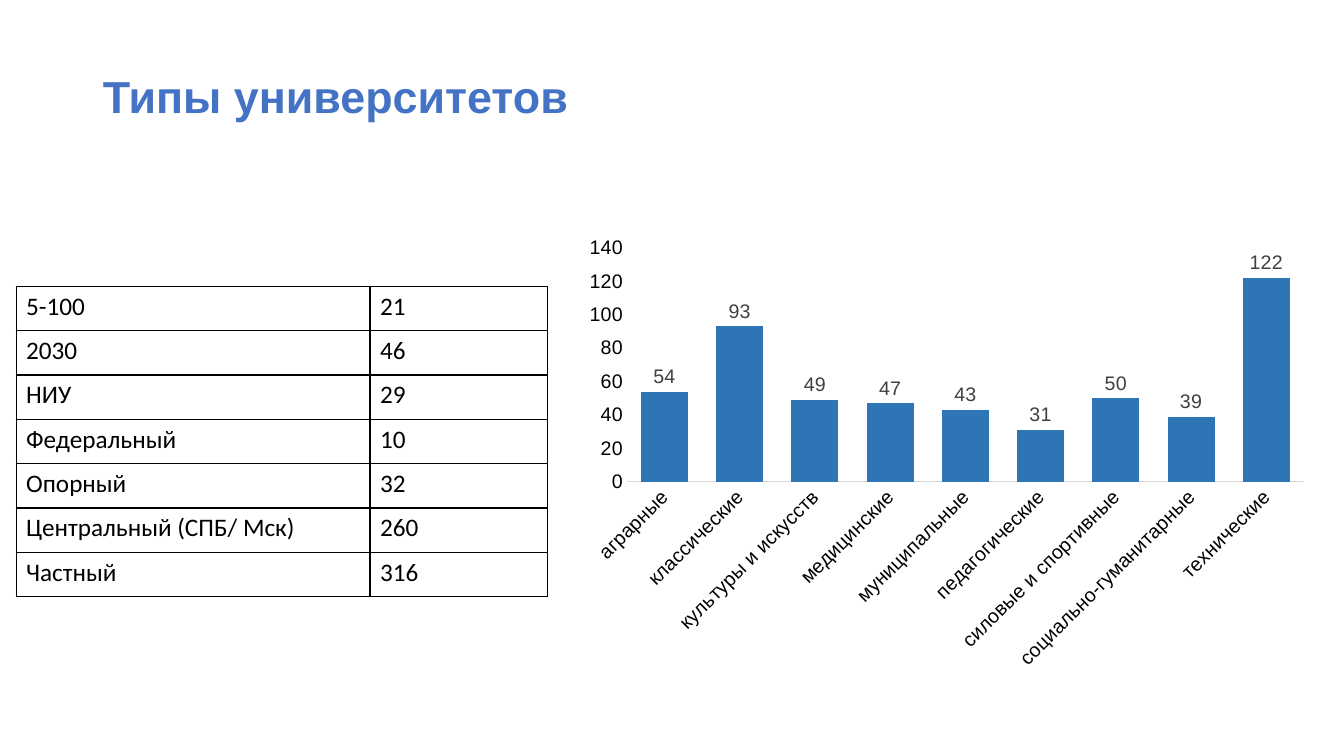
import pptx
import pptx.chart.data
import pptx.dml.color
import pptx.enum.chart
import pptx.enum.text
import pptx.oxml
import pptx.oxml.ns
import pptx.util
from dataclasses import dataclass

PX = 9144  # EMU in one px, 100 px to the inch


@dataclass(frozen=True)
class Theme:
    title: str = "4472C4"
    text: str = "000000"
    label: str = "404040"
    bar: str = "2E75B6"
    axis: str = "D9D9D9"
    border: str = "000000"
    head_font: str = "Arial"
    table_font: str = "Calibri"
    title_size: int = 32
    table_size: int = 18
    chart_size: int = 14


THEME = Theme()

UNIVERSITY_STATUS = [
    ("5-100", 21),
    ("2030", 46),
    ("НИУ", 29),
    ("Федеральный", 10),
    ("Опорный", 32),
    ("Центральный (СПБ/ Мск)", 260),
    ("Частный", 316),
]

UNIVERSITY_TYPES = {
    "аграрные": 54,
    "классические": 93,
    "культуры и искусств": 49,
    "медицинские": 47,
    "муниципальные": 43,
    "педагогические": 31,
    "силовые и спортивные": 50,
    "социально-гуманитарные": 39,
    "технические": 122,
}


def box(*lengths):
    return [pptx.util.Emu(n * PX) for n in lengths]


def rgb(color):
    return pptx.dml.color.RGBColor.from_string(color)


def set_attrs(obj, values):
    for name, value in values.items():
        setattr(obj, name, value)


def set_font(font, name, size, color, bold=False):
    set_attrs(font, {"name": name, "size": pptx.util.Pt(size), "bold": bold})
    font.color.rgb = rgb(color)


def add_title(s, text, left, top, width, height):
    sp = s.shapes.title
    place = zip(("left", "top", "width", "height"), box(left, top, width, height))
    set_attrs(sp, dict(place))
    tf = sp.text_frame
    tf.vertical_anchor = pptx.enum.text.MSO_ANCHOR.MIDDLE
    p = tf.paragraphs[0]
    set_attrs(p, {"alignment": pptx.enum.text.PP_ALIGN.LEFT, "line_spacing": 0.9})
    r = p.add_run()
    r.text = text
    set_font(r.font, THEME.head_font, THEME.title_size, THEME.title, True)


def border_cell(cell):
    tc_pr = cell._tc.get_or_add_tcPr()
    for side in ("lnL", "lnR", "lnT", "lnB"):
        tc_pr.append(pptx.oxml.parse_xml(
            f'<a:{side} {pptx.oxml.ns.nsdecls("a")} w="12700"><a:solidFill>'
            f'<a:srgbClr val="{THEME.border}"/></a:solidFill></a:{side}>'))


def add_status_table(s, rows, left, top, col_widths, row_height):
    size = box(left, top, sum(col_widths), row_height * len(rows))
    table = s.shapes.add_table(len(rows), len(col_widths), *size).table
    set_attrs(table, {"first_row": False, "horz_banding": False})
    for column, width in zip(table.columns, box(*col_widths)):
        column.width = width
    for i, row in enumerate(rows):
        table.rows[i].height = pptx.util.Emu(row_height * PX)
        for j, value in enumerate(row):
            cell = table.cell(i, j)
            border_cell(cell)
            cell.fill.background()
            r = cell.text_frame.paragraphs[0].add_run()
            r.text = str(value)
            set_font(r.font, THEME.table_font, THEME.table_size, THEME.text)


def format_axis(axis):
    none = pptx.enum.chart.XL_TICK_MARK.NONE
    set_attrs(axis, {"has_major_gridlines": False,
                     "major_tick_mark": none, "minor_tick_mark": none})
    set_font(axis.tick_labels.font, THEME.head_font, THEME.chart_size, THEME.text)


def add_type_chart(s, counts, left, top, width, height):
    data = pptx.chart.data.CategoryChartData()
    data.categories = list(counts)
    data.add_series("Series 1", list(counts.values()))
    kind = pptx.enum.chart.XL_CHART_TYPE.COLUMN_CLUSTERED
    chart = s.shapes.add_chart(kind, *box(left, top, width, height), data).chart
    set_attrs(chart, {"has_legend": False, "has_title": False})
    set_font(chart.font, THEME.head_font, THEME.chart_size, THEME.text)

    # Axes, with slanted category names
    names, values = chart.category_axis, chart.value_axis
    for axis in (names, values):
        format_axis(axis)
    names.format.line.color.rgb = rgb(THEME.axis)
    names.format.line.width = pptx.util.Pt(0.75)
    names._element.txPr.bodyPr.set("rot", "-2700000")
    values.format.line.fill.background()
    set_attrs(values, {"minimum_scale": 0, "maximum_scale": 140, "major_unit": 20})

    # Bars and their values
    plot = chart.plots[0]
    set_attrs(plot, {"gap_width": 60, "overlap": 8,
                     "vary_by_categories": False, "has_data_labels": True})
    fill = plot.series[0].format.fill
    fill.solid()
    fill.fore_color.rgb = rgb(THEME.bar)
    labels = plot.data_labels
    set_attrs(labels, {"show_value": True,
                       "position": pptx.enum.chart.XL_LABEL_POSITION.OUTSIDE_END})
    set_font(labels.font, THEME.head_font, THEME.chart_size, THEME.label)


def main():
    prs = pptx.Presentation()
    prs.slide_width, prs.slide_height = box(1333, 750)
    s = prs.slides.add_slide(prs.slide_layouts[5])
    add_title(s, "Типы университетов", 92, 26, 1150, 145)
    add_status_table(s, UNIVERSITY_STATUS, 16, 284, (351, 176), 44)
    add_type_chart(s, UNIVERSITY_TYPES, 570, 226, 738, 447)
    prs.save("out.pptx")


if __name__ == "__main__":
    main()
